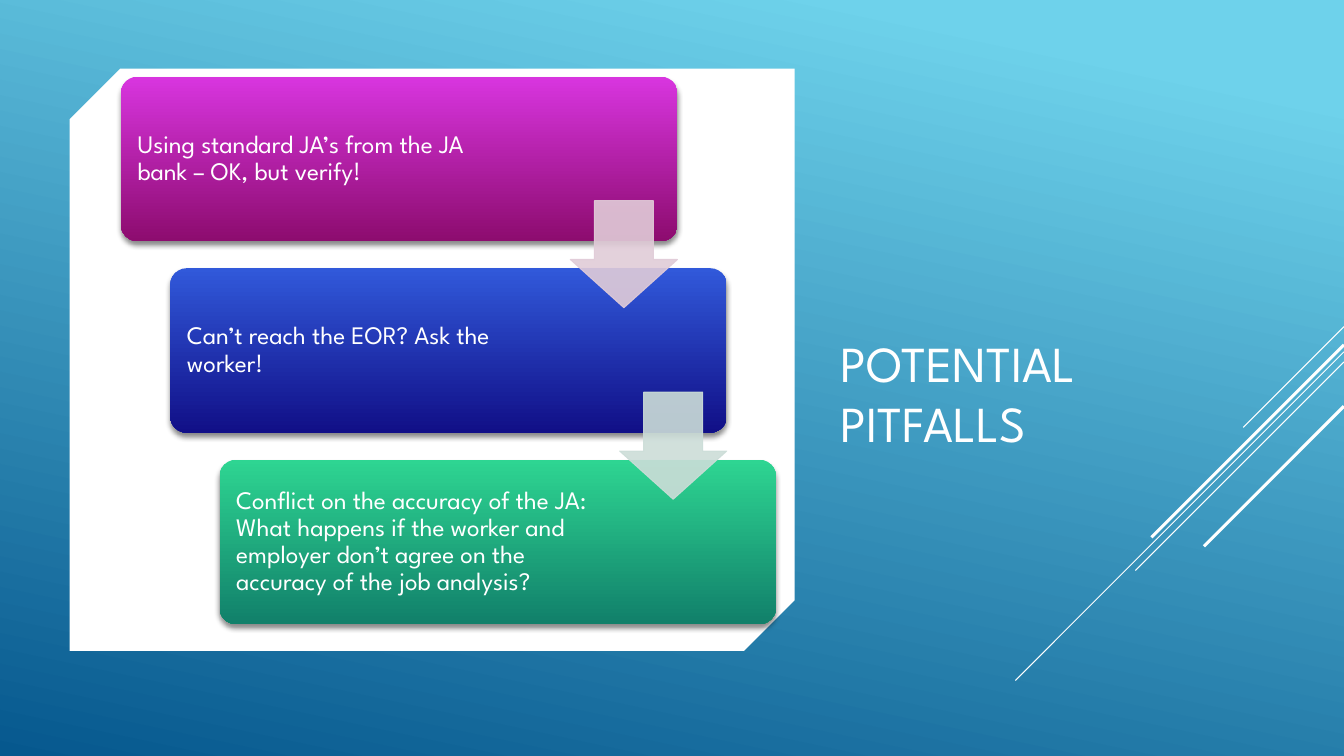
from dataclasses import dataclass

from lxml.etree import SubElement
from pptx import Presentation
from pptx.dml.color import RGBColor
from pptx.enum.shapes import MSO_CONNECTOR, MSO_SHAPE
from pptx.enum.text import MSO_ANCHOR, MSO_AUTO_SIZE, PP_ALIGN
from pptx.oxml.ns import qn
from pptx.util import Pt


@dataclass(frozen=True)
class Theme:
    font: str = "League Spartan"
    title_size: float = 36
    step_size: float = 18
    white: str = "FFFFFF"
    shadow: str = "000000"
    sky: str = "6ED2EB"
    sea: str = "06588E"


@dataclass(frozen=True)
class Step:
    text: str
    top_color: str
    bottom_color: str
    right_inset: float
    arrow_color: str = ""  # empty when no step follows


@dataclass(frozen=True)
class Streak:
    top: float    # height at the right edge of the slide
    reach: float  # distance covered to the left and downwards
    width: float


THEME = Theme()
SLIDE_WIDTH, SLIDE_HEIGHT = 960, 540
CARD_LEFT, CARD_TOP, CARD_WIDTH, CARD_HEIGHT = 86.4, 54.8, 397.5, 117.4
CARD_SHIFT, CARD_PITCH = 35.2, 136.8
ARROW_SIZE, ARROW_DROP = 76.5, 88.5

STEPS = [
    Step("Using standard JA’s from the JA bank – OK, but verify!",
         "D835DF", "8D0C6F", 127.5, "E1CCD8"),
    Step("Can’t reach the EOR? Ask the worker!",
         "3159DA", "110F87", 119.5, "CCDDD8"),
    Step("Conflict on the accuracy of the JA: What happens if the worker and "
         "employer don’t agree on the accuracy of the job analysis?",
         "2ED592", "11806A", 119.5),
]
STREAKS = [
    Streak(233.3, 72, 0.75),
    Streak(251.3, 234.7, 0.75),
    Streak(258.5, 149, 0.75),
    Streak(246.3, 137.5, 2.25),
    Streak(290.2, 100, 2.25),
]


def apply_format(target, values: dict) -> None:
    for name, value in values.items():
        setattr(target, name, value)


def fill_gradient(fill, start: str, end: str, clockwise: float, first: float = 0) -> None:
    fill.gradient()
    fill.gradient_angle = 360 - clockwise
    for stop, color, position in zip(fill.gradient_stops, (start, end), (first, 1)):
        stop.color.rgb = RGBColor.from_string(color)
        stop.position = position


def fill_solid(fill, color: str, opacity: int = 100) -> None:
    fill.solid()
    fill.fore_color.rgb = RGBColor.from_string(color)
    if opacity < 100:
        for rgb in fill._xPr.iter(qn("a:srgbClr")):
            SubElement(rgb, qn("a:alpha"), val=str(opacity * 1000))


def write_text(frame, text: str, size: float, spacing: float, frame_format: dict) -> None:
    frame.text = text
    apply_format(frame, {"word_wrap": True, "auto_size": MSO_AUTO_SIZE.NONE, **frame_format})
    paragraph = frame.paragraphs[0]
    apply_format(paragraph, {"alignment": PP_ALIGN.LEFT, "line_spacing": spacing})
    font = paragraph.runs[0].font
    apply_format(font, {"name": THEME.font, "size": Pt(size)})
    font.color.rgb = RGBColor.from_string(THEME.white)


def add_plain_shape(slide, kind, left: float, top: float, width: float, height: float,
                    adjustments: tuple):
    shape = slide.shapes.add_shape(kind, Pt(left), Pt(top), Pt(width), Pt(height))
    shape.shadow.inherit = False
    shape.line.fill.background()
    for index, value in enumerate(adjustments):
        shape.adjustments[index] = value
    return shape


def add_card_shadow(card) -> None:
    effects = card._element.spPr.find(qn("a:effectLst"))
    shadow = SubElement(effects, qn("a:outerShdw"), blurRad=str(Pt(4)), dist=str(Pt(3)),
                        dir="5400000", algn="ctr", rotWithShape="0")
    color = SubElement(shadow, qn("a:srgbClr"), val=THEME.shadow)
    SubElement(color, qn("a:alpha"), val="46000")


def add_streak(slide, streak: Streak) -> None:
    line = slide.shapes.add_connector(
        MSO_CONNECTOR.STRAIGHT, Pt(SLIDE_WIDTH), Pt(streak.top),
        Pt(SLIDE_WIDTH - streak.reach), Pt(streak.top + streak.reach))
    line.line.width = Pt(streak.width)
    fill_solid(line.line.fill, THEME.white)
    SubElement(line._element.spPr, qn("a:effectLst"))


def add_card(slide, step: Step, left: float, top: float) -> None:
    card = add_plain_shape(slide, MSO_SHAPE.ROUNDED_RECTANGLE, left, top,
                           CARD_WIDTH, CARD_HEIGHT, (0.1,))
    fill_gradient(card.fill, step.top_color, step.bottom_color, 90)
    add_card_shadow(card)
    write_text(card.text_frame, step.text, THEME.step_size, 0.9, {
        "vertical_anchor": MSO_ANCHOR.MIDDLE,
        "margin_left": Pt(8.5), "margin_right": Pt(step.right_inset),
        "margin_top": Pt(8.5), "margin_bottom": Pt(8.5)})


def add_arrow(slide, color: str, card_left: float, card_top: float) -> None:
    arrow = add_plain_shape(slide, MSO_SHAPE.DOWN_ARROW, card_left + CARD_WIDTH - ARROW_SIZE,
                            card_top + ARROW_DROP, ARROW_SIZE, ARROW_SIZE, (0.55, 0.45))
    fill_solid(arrow.fill, color, 90)
    arrow.line.width = Pt(0.75)
    fill_solid(arrow.line.fill, color, 90)


def main() -> None:
    deck = Presentation()
    apply_format(deck, {"slide_width": Pt(SLIDE_WIDTH), "slide_height": Pt(SLIDE_HEIGHT)})
    slide = deck.slides.add_slide(deck.slide_layouts[5])

    # Background
    fill_gradient(slide.background.fill, THEME.sky, THEME.sea, 102, 0.1)

    # Title
    title = slide.shapes.title
    apply_format(title, {"left": Pt(593.3), "top": Pt(49), "width": Pt(288), "height": Pt(278)})
    write_text(title.text_frame, "POTENTIAL PITFALLS", THEME.title_size, 1.0,
               {"vertical_anchor": MSO_ANCHOR.BOTTOM})

    # White panel
    panel = add_plain_shape(slide, MSO_SHAPE.SNIP_2_DIAG_RECTANGLE,
                            49.8, 49, 517.8, 416, (0.087, 0))
    fill_solid(panel.fill, THEME.white)

    # Diagonal streaks
    for streak in STREAKS:
        add_streak(slide, streak)

    # Staircase of steps, with the arrows in front
    places = [(CARD_LEFT + i * CARD_SHIFT, CARD_TOP + i * CARD_PITCH)
              for i in range(len(STEPS))]
    for step, (left, top) in zip(STEPS, places):
        add_card(slide, step, left, top)
    for step, (left, top) in zip(STEPS, places):
        if step.arrow_color:
            add_arrow(slide, step.arrow_color, left, top)

    deck.save("out.pptx")


if __name__ == "__main__":
    main()
